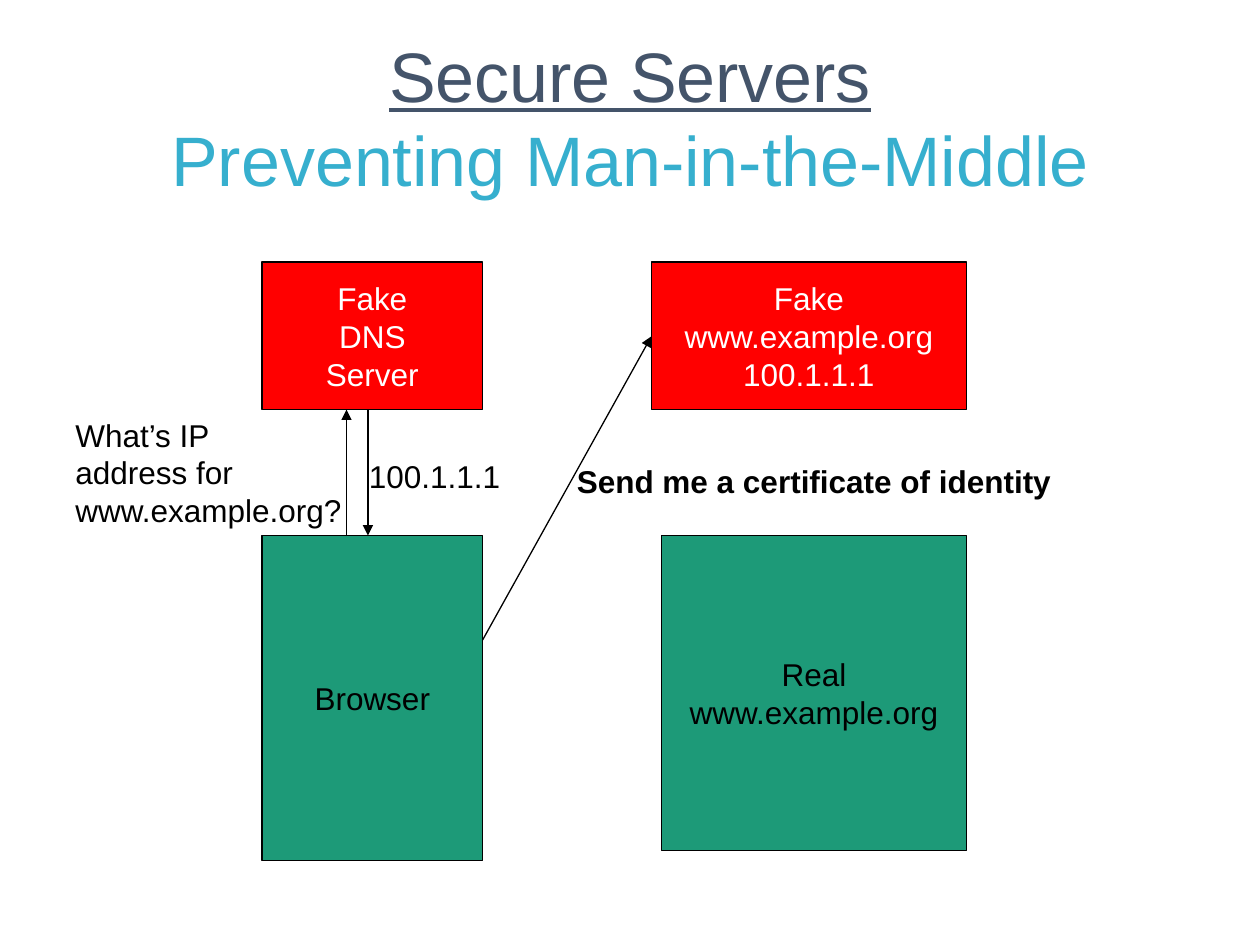
from pptx import Presentation
from pptx.dml.color import RGBColor
from pptx.enum.shapes import MSO_CONNECTOR, MSO_SHAPE
from pptx.enum.text import MSO_ANCHOR, PP_ALIGN
from pptx.oxml.ns import qn
from pptx.util import Inches, Pt
from lxml.etree import SubElement

BLACK = RGBColor(0x00, 0x00, 0x00)
WHITE = RGBColor(0xFF, 0xFF, 0xFF)
RED = RGBColor(0xFF, 0x00, 0x00)
GREEN = RGBColor(0x1D, 0x9A, 0x78)
SLATE = RGBColor(0x44, 0x54, 0x6A)
CYAN = RGBColor(0x36, 0xAF, 0xCE)

FONT = "Arial"
LINE_WIDTH = Pt(0.75)

TITLE_BOX = (0.5, 0.3, 9, 1.25)
TITLE = ["Secure Servers", "Preventing Man-in-the-Middle"]

# lines, (left, top, width, height), fill, text colour
HOSTS = [
    (["Browser"], (2.08, 4.25, 1.75, 2.58), GREEN, BLACK),
    (["Fake", "DNS", "Server"], (2.08, 2.08, 1.75, 1.17), RED, WHITE),
    (["Fake", "www.example.org", "100.1.1.1"], (5.17, 2.08, 2.5, 1.17), RED, WHITE),
    (["Real", "www.example.org"], (5.25, 4.25, 2.42, 2.5), GREEN, BLACK),
]

# lines, (left, top, width, height), bold
MESSAGES = [
    (["What’s IP", "address for", "www.example.org?"], (0.5, 3.25, 2.33, 1), False),
    (["100.1.1.1"], (2.83, 3.58, 1.24, 0.4), False),
    (["Send me a certificate of identity"], (4.48, 3.62, 3.97, 0.4), True),
]

# start, end
ARROWS = [
    ((2.75, 4.25), (2.75, 3.25)),  # DNS query
    ((2.92, 3.25), (2.92, 4.25)),  # DNS reply
    ((3.83, 5.08), (5.17, 2.67)),  # certificate request
]


def write_text(shape, lines, size=18, color=BLACK, bold=False,
               align=PP_ALIGN.LEFT, anchor=MSO_ANCHOR.TOP, wrap=True):
    """Put each line in its own paragraph and return the runs."""
    frame = shape.text_frame
    frame.word_wrap = wrap
    frame.vertical_anchor = anchor
    runs = []
    for index, line in enumerate(lines):
        paragraph = frame.add_paragraph() if index else frame.paragraphs[0]
        paragraph.alignment = align
        run = paragraph.add_run()
        run.text = line
        run.font.name = FONT
        run.font.size = Pt(size)
        run.font.bold = bold
        run.font.color.rgb = color
        runs.append(run)
    return runs


def add_title(slide):
    title = slide.shapes.add_textbox(*map(Inches, TITLE_BOX))
    heading, subheading = write_text(title, TITLE, size=40, color=SLATE,
                                     align=PP_ALIGN.CENTER, anchor=MSO_ANCHOR.MIDDLE)
    heading.font.underline = True
    subheading.font.color.rgb = CYAN


def add_host(slide, lines, box, fill, color):
    host = slide.shapes.add_shape(MSO_SHAPE.RECTANGLE, *map(Inches, box))
    host.shadow.inherit = False
    host.fill.solid()
    host.fill.fore_color.rgb = fill
    host.line.color.rgb = BLACK
    host.line.width = LINE_WIDTH
    write_text(host, lines, color=color, align=PP_ALIGN.CENTER, anchor=MSO_ANCHOR.MIDDLE)


def add_arrow(slide, start, end):
    arrow = slide.shapes.add_connector(MSO_CONNECTOR.STRAIGHT, *map(Inches, start + end))
    arrow.line.color.rgb = BLACK
    arrow.line.width = LINE_WIDTH
    SubElement(arrow.line._get_or_add_ln(), qn("a:tailEnd"), type="triangle")
    SubElement(arrow._element.spPr, qn("a:effectLst"))


def main():
    presentation = Presentation()
    presentation.slide_width = Inches(10)
    presentation.slide_height = Inches(7.5)
    slide = presentation.slides.add_slide(presentation.slide_layouts[6])

    add_title(slide)
    for host in HOSTS:
        add_host(slide, *host)
    for arrow in ARROWS:
        add_arrow(slide, *arrow)
    for lines, box, bold in MESSAGES:
        message = slide.shapes.add_textbox(*map(Inches, box))
        write_text(message, lines, bold=bold, wrap=False)

    presentation.save("out.pptx")


if __name__ == "__main__":
    main()
